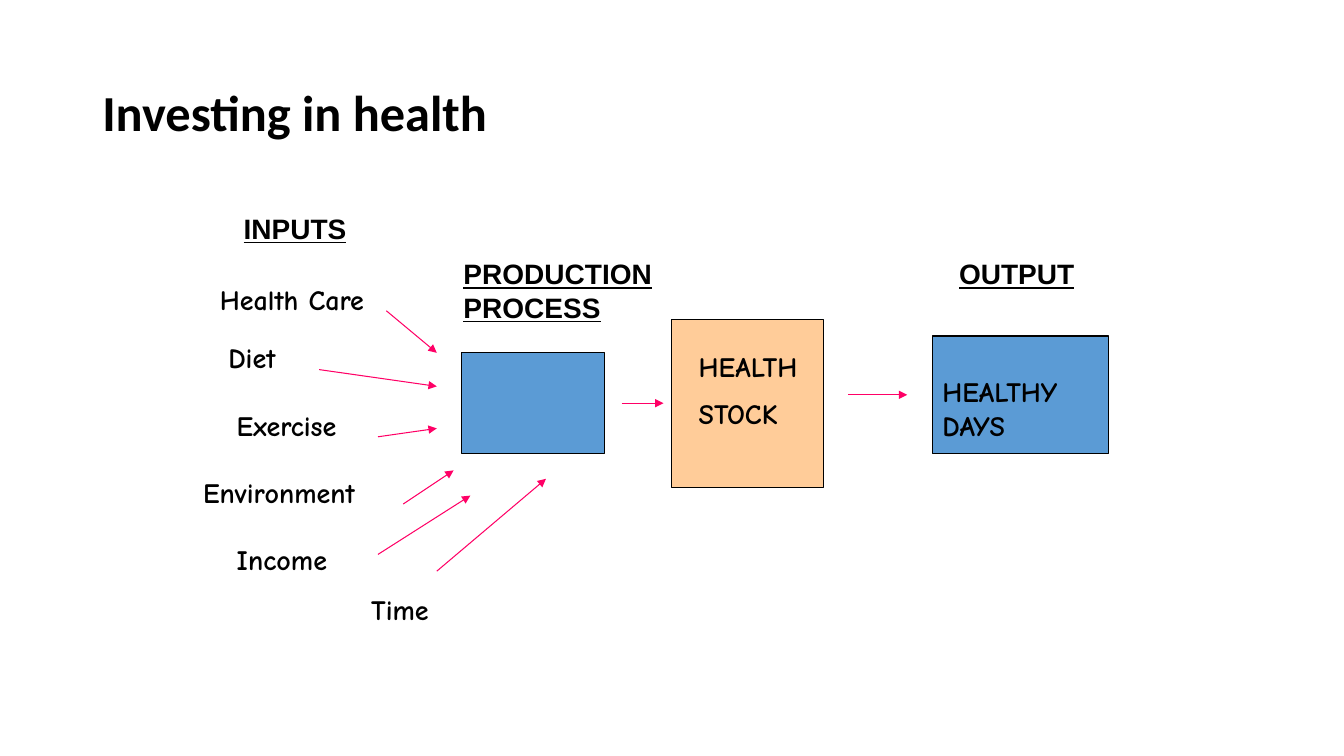
from lxml import etree
from pptx import Presentation
from pptx import util as u
from pptx.dml.color import RGBColor
from pptx.enum import shapes, text
from pptx.oxml.ns import qn

BLACK = RGBColor(0x00, 0x00, 0x00)
BLUE = RGBColor(0x5B, 0x9B, 0xD5)
PEACH = RGBColor(0xFF, 0xCC, 0x99)
PINK = RGBColor(0xFF, 0x00, 0x66)


class Diagram:
    """Holds the style and the slide being drawn; lengths are in points."""

    title_font, heading_font, label_font = "Calibri", "Arial", "Comic Neue"
    text_size = 20
    line_width = 0.75
    paragraph_gap = 10

    def __init__(self, page):
        self.page = page

    def add_text(self, place, lines, font, size=text_size, underline=None,
                 anchor=text.MSO_ANCHOR.TOP, wrap=True):
        box = self.page.shapes.add_textbox(*map(u.Pt, place))
        frame = box.text_frame
        frame.word_wrap = wrap
        frame.vertical_anchor = anchor
        for number, line in enumerate(lines):
            para = frame.add_paragraph() if number else frame.paragraphs[0]
            if number:
                para.space_before = u.Pt(self.paragraph_gap)
            span = para.add_run()
            span.text = line
            span.font.name = font
            span.font.size = u.Pt(size)
            span.font.bold = True
            span.font.underline = underline
            span.font.color.rgb = BLACK
        return box

    def title(self, place, line):
        box = self.add_text(place, [line], self.title_font, size=36,
                            anchor=text.MSO_ANCHOR.MIDDLE)
        box.text_frame.paragraphs[0].line_spacing = 0.9

    def heading(self, place, line, wrap=True):
        self.add_text(place, [line], self.heading_font, underline=True,
                      wrap=wrap)

    def label(self, place, *lines):
        self.add_text(place, lines, self.label_font)

    def block(self, place, colour):
        block = self.page.shapes.add_shape(
            shapes.MSO_SHAPE.RECTANGLE, *map(u.Pt, place))
        block.shadow.inherit = False
        block.fill.solid()
        block.fill.fore_color.rgb = colour
        block.line.color.rgb = BLACK
        block.line.width = u.Pt(self.line_width)

    def arrow(self, *ends):
        arrow = self.page.shapes.add_connector(
            shapes.MSO_CONNECTOR.STRAIGHT, *map(u.Pt, ends))
        arrow.line.color.rgb = PINK
        arrow.line.width = u.Pt(self.line_width)
        properties = arrow._element.spPr
        outline = properties.find(qn("a:ln"))
        etree.SubElement(outline, qn("a:tailEnd"), type="triangle")
        etree.SubElement(properties, qn("a:effectLst"))


def main():
    deck = Presentation()
    deck.slide_width, deck.slide_height = u.Pt(960), u.Pt(540)
    diagram = Diagram(deck.slides.add_slide(deck.slide_layouts[6]))

    diagram.title((66, 30, 828, 104), "Investing in health")

    # Process, stock and output blocks
    diagram.block((480, 228, 108, 120), PEACH)
    diagram.block((666, 240, 126, 84), BLUE)
    diagram.block((330, 252, 102, 72), BLUE)
    diagram.label((492, 246, 126, 67), "HEALTH", "STOCK")
    diagram.label((666, 264, 138, 55), "HEALTHY DAYS")

    # Column headings
    diagram.heading((167, 147.5, 88, 31), "INPUTS", wrap=False)
    diagram.heading((324, 180, 186, 55), "PRODUCTION PROCESS")
    diagram.heading((678, 180, 138, 31), "OUTPUT")

    # Inputs: name, left, top, width, then the ends of the arrow
    inputs = [
        ("Health Care", 150, 198, 132, (276, 222, 312, 252)),
        ("Diet", 156, 240, 108, (228, 264, 312, 276)),
        ("Exercise", 162, 288, 120, (270, 312, 312, 306)),
        ("Environment", 138, 336, 204, (288, 360, 324, 336)),
        ("Income", 162, 384, 126, (270, 396, 336, 354)),
        ("Time", 258, 420, 96, (312, 408, 390, 342)),
    ]
    for name, left, top, width, ends in inputs:
        diagram.label((left, top, width, 31), name)
        diagram.arrow(*ends)

    # Flow from process to stock to output
    diagram.arrow(444, 288, 474, 288)
    diagram.arrow(606, 282, 648, 282)

    deck.save("out.pptx")


if __name__ == "__main__":
    main()
